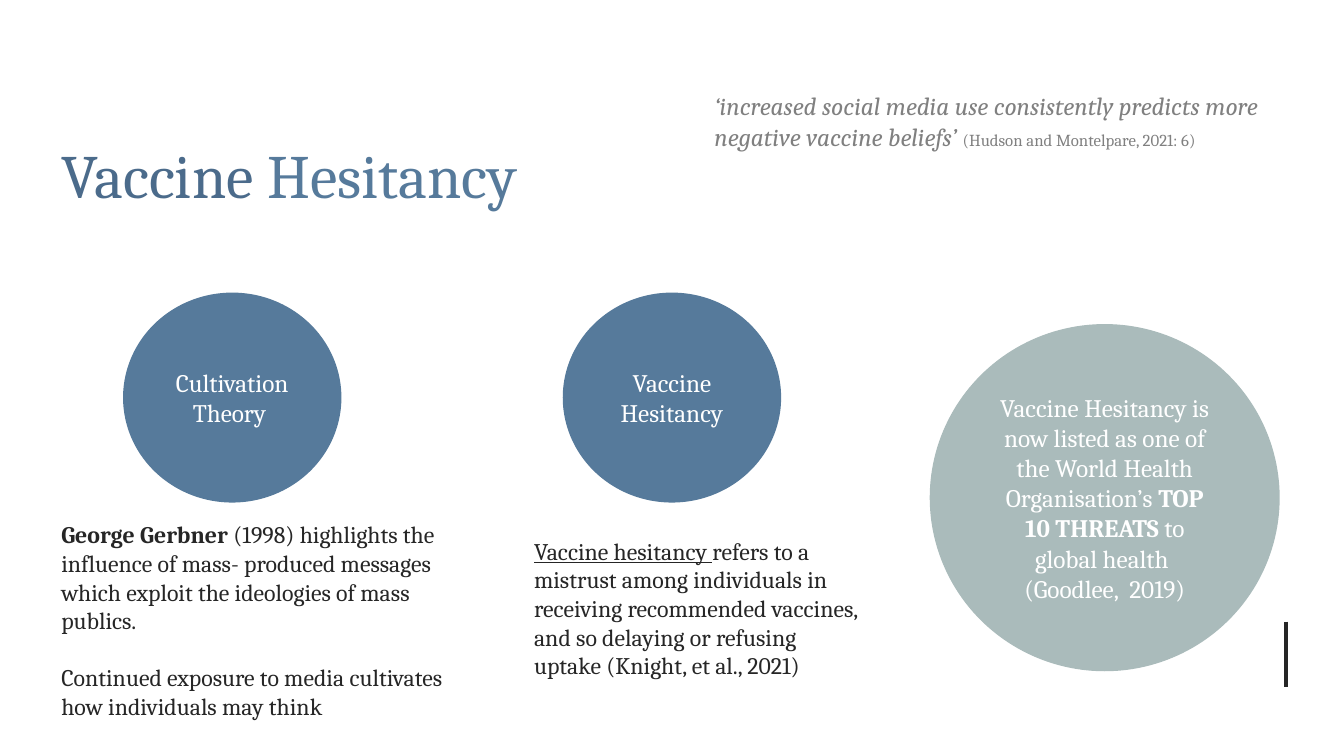
from dataclasses import dataclass

from pptx import Presentation
from pptx.dml.color import RGBColor as Rgb
from pptx.enum.shapes import MSO_CONNECTOR as Link, MSO_SHAPE as Form
from pptx.enum.text import MSO_ANCHOR as Anchor, PP_ALIGN as Align
from pptx.oxml.ns import qn
from pptx.util import Pt
from lxml.etree import SubElement


@dataclass(frozen=True)
class Theme:
    font: str = "Cambria"
    blue: str = "567A9B"
    navy: str = "4B6B8B"
    sage: str = "AABBBB"
    gray: str = "808080"
    ink: str = "262626"
    white: str = "FFFFFF"
    head: float = 44
    label: float = 18
    body: float = 17
    cite: float = 12


theme = Theme()


def color(code):
    return Rgb.from_string(code)


def add_run(para, text, size, tone, bold=False, italic=False, under=False):
    run = para.add_run()
    run.text = text
    font = run.font
    font.name, font.size = theme.font, Pt(size)
    font.color.rgb = color(tone)
    font.bold, font.italic, font.underline = bold, italic, under


def fill_text(frame, paras, size, tone, align=Align.LEFT, gap=0):
    """Each paragraph is a list of (text, changes) runs."""
    frame.word_wrap = True
    for i, runs in enumerate(paras):
        para = frame.add_paragraph() if i else frame.paragraphs[0]
        para.alignment = align
        if i:
            para.space_before = Pt(gap)
        for text, change in runs:
            add_run(para, text, **{"size": size, "tone": tone, **change})


def add_text(slide, box, paras, size, tone, anchor=Anchor.TOP, gap=0):
    frame = slide.shapes.add_textbox(*map(Pt, box)).text_frame
    frame.vertical_anchor = anchor
    fill_text(frame, paras, size, tone, gap=gap)


def add_disc(slide, box, tone, paras):
    disc = slide.shapes.add_shape(Form.OVAL, *map(Pt, box))
    disc.shadow.inherit = False
    disc.fill.solid()
    disc.fill.fore_color.rgb = color(tone)
    disc.line.color.rgb = color(tone)
    disc.line.width = Pt(1)
    disc.text_frame.vertical_anchor = Anchor.MIDDLE
    fill_text(disc.text_frame, paras, theme.label, theme.white, Align.CENTER)


def add_line(slide, ends, tone, width):
    line = slide.shapes.add_connector(Link.STRAIGHT, *map(Pt, ends))
    line.line.color.rgb = color(tone)
    line.line.width = Pt(width)
    SubElement(line._element.spPr, qn("a:effectLst"))


def main():
    deck = Presentation()
    deck.slide_width, deck.slide_height = Pt(960), Pt(540)
    slide = deck.slides.add_slide(deck.slide_layouts[6])

    # Accent bar
    add_line(slide, (918.5, 444, 918.5, 491), theme.ink, 3)

    # Title and quote
    add_text(slide, (36.7, 67.7, 841, 112.5),
             [[("Vaccine", {"tone": theme.navy}), (" Hesitancy", {})]],
             theme.head, theme.blue, Anchor.MIDDLE)
    add_text(slide, (503.3, 61.2, 420.5, 65.5), [[
        ("‘increased social media use consistently predicts more "
         "negative vaccine beliefs’ ", {"italic": True}),
        ("(Hudson and Montelpare, 2021: 6)", {"size": theme.cite}),
    ]], theme.label, theme.gray)

    # Topic discs
    for left, name in ((88.4, "Cultivation Theory "),
                       (402.5, "Vaccine Hesitancy")):
        add_disc(slide, (left, 209.5, 155, 149), theme.blue, [[(name, {})]])

    # Explanations
    add_text(slide, (36.7, 368, 299.5, 172), [
        [("George Gerbner ", {"bold": True}),
         ("(1998) highlights the influence of mass- produced messages "
          "which exploit the ideologies of mass publics.", {})],
        [("Continued exposure to media cultivates how individuals "
          "may think", {})],
    ], theme.body, theme.ink, gap=20.4)
    add_text(slide, (374.4, 379.7, 249, 131), [[
        ("Vaccine hesitancy ", {"under": True}),
        ("refers to a mistrust among individuals in receiving recommended "
         "vaccines, and so delaying or refusing uptake "
         "(Knight, et al., 2021)", {}),
    ]], theme.body, theme.ink)

    # Global threat disc
    add_disc(slide, (664.6, 232, 249, 247), theme.sage, [
        [("Vaccine Hesitancy is now listed as one of the World Health "
          "Organisation’s ", {}),
         ("TOP 10 THREATS ", {"bold": True}),
         ("to global health ", {})],
        [("(Goodlee,  2019)", {})],
    ])

    deck.save("out.pptx")


if __name__ == "__main__":
    main()
